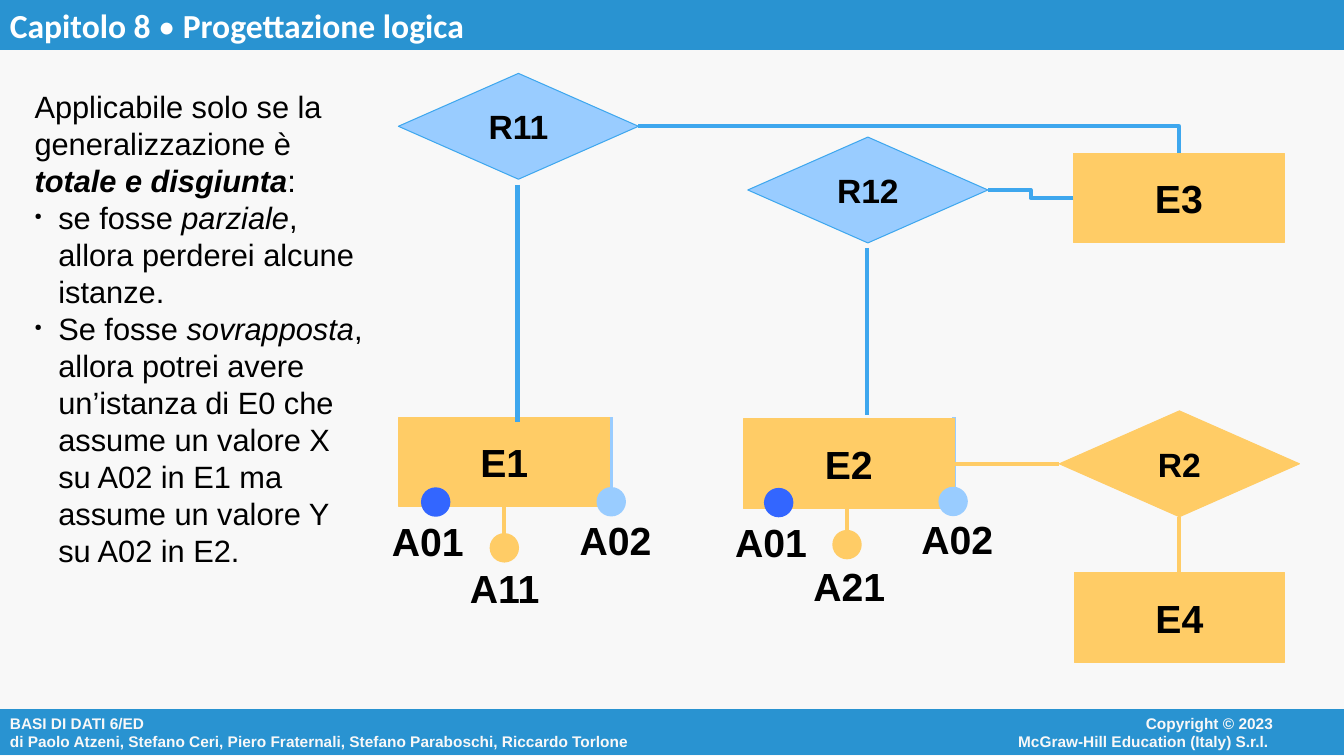
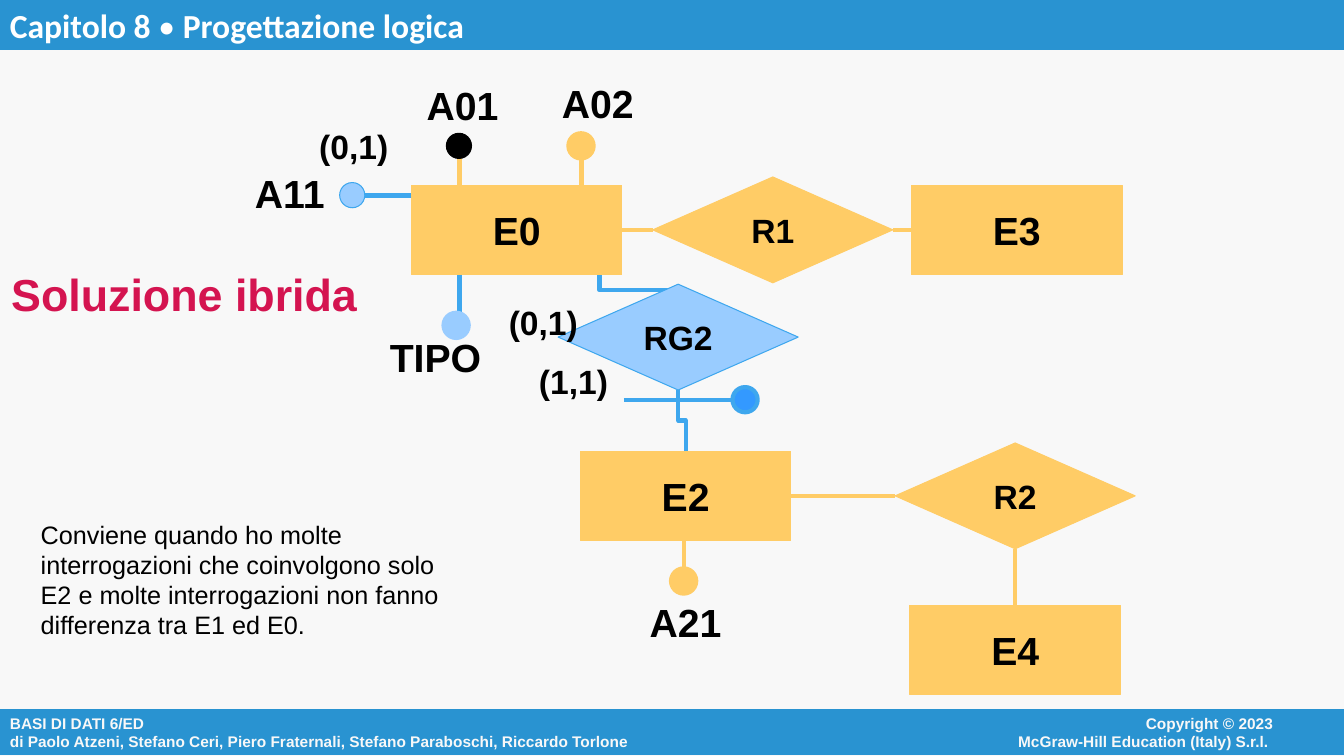
import dataclasses

import lxml.etree
import pptx
import pptx.dml.color
import pptx.enum.shapes
import pptx.enum.text
import pptx.oxml.ns
import pptx.util

Pt = pptx.util.Pt
SHAPE = pptx.enum.shapes.MSO_SHAPE
LINE = pptx.enum.shapes.MSO_CONNECTOR
ALIGN = pptx.enum.text.PP_ALIGN
ANCHOR = pptx.enum.text.MSO_ANCHOR
qn = pptx.oxml.ns.qn
TOP, LEFT, BOTTOM, RIGHT = range(4)


@dataclasses.dataclass(frozen=True)
class Theme:
    paper: str = "F8F8F8"
    band: str = "2993D1"
    white: str = "FFFFFF"
    ink: str = "000000"
    orange: str = "FFCC66"
    pale: str = "99CCFF"
    blue: str = "3EA7EE"
    key: str = "3366FF"
    bright: str = "3399FF"
    red: str = "D41450"
    font: str = "Arial"
    title_font: str = "Calibri"
    footer: float = 11
    note: float = 18
    body: float = 22
    small: float = 24
    label: float = 28
    heading: float = 32
    thin: float = 0.75
    thick: float = 3


T = Theme()
WIDTH, HEIGHT = 960, 540
ENTITY = (150.5, 64)
RELATION = (171.5, 75.6)
DOT = 18


def rgb(value):
    return pptx.dml.color.RGBColor.from_string(value)


def add_bullet(p):
    pPr = p._p.get_or_add_pPr()
    pPr.set("marL", str(Pt(17)))
    pPr.set("indent", str(-Pt(17)))
    color = lxml.etree.SubElement(pPr, qn("a:buClr"))
    lxml.etree.SubElement(color, qn("a:srgbClr"), val=T.ink)
    lxml.etree.SubElement(pPr, qn("a:buSzPct"), val="30000")
    lxml.etree.SubElement(pPr, qn("a:buChar"), char="●")


def write(sp, *paragraphs, size=T.label, font=T.font, color=T.ink, bold=False,
          align=ALIGN.LEFT, anchor=ANCHOR.TOP, wrap=True, bullets=()):
    tf = sp.text_frame
    tf.word_wrap = wrap
    tf.vertical_anchor = anchor
    for i, runs in enumerate(paragraphs):
        p = tf.paragraphs[0] if i == 0 else tf.add_paragraph()
        p.alignment = align
        if i in bullets:
            add_bullet(p)
        for run in [(runs, "")] if isinstance(runs, str) else runs:
            text, style = run
            r = p.add_run()
            r.text = text
            r.font.size = Pt(size)
            r.font.name = font
            r.font.color.rgb = rgb(color)
            r.font.bold = bold or "b" in style
            r.font.italic = "i" in style


def add_text(s, x, y, w, h, *paragraphs, **fmt):
    sp = s.shapes.add_textbox(Pt(x), Pt(y), Pt(w), Pt(h))
    write(sp, *paragraphs, **fmt)


def add_shape(s, kind, x, y, w, h, fill, line, weight=T.thin):
    sp = s.shapes.add_shape(kind, Pt(x), Pt(y), Pt(w), Pt(h))
    sp.shadow.inherit = False
    sp.fill.solid()
    sp.fill.fore_color.rgb = rgb(fill)
    sp.line.color.rgb = rgb(line)
    sp.line.width = Pt(weight)
    return sp


def add_entity(s, name, x, y):
    sp = add_shape(s, SHAPE.RECTANGLE, x, y, *ENTITY, T.orange, T.orange)
    write(sp, name, bold=True, align=ALIGN.CENTER, anchor=ANCHOR.MIDDLE, wrap=False)
    return sp


def add_relation(s, name, x, y, fill=T.orange, line=T.orange):
    sp = add_shape(s, SHAPE.DIAMOND, x, y, *RELATION, fill, line)
    write(sp, name, size=T.small, bold=True, align=ALIGN.CENTER,
          anchor=ANCHOR.MIDDLE, wrap=False)
    return sp


def add_dot(s, x, y, fill, line=None, weight=T.thick):
    return add_shape(s, SHAPE.OVAL, x, y, DOT, DOT, fill, line or fill, weight)


def add_label(s, name, x, y, w=80):
    add_text(s, x, y, w, 40, name, bold=True)


def add_cardinality(s, text, x, y):
    add_text(s, x, y, 80, 36, text, size=T.small, bold=True,
             align=ALIGN.CENTER, anchor=ANCHOR.MIDDLE)


def add_line(s, x1, y1, x2, y2, color=T.blue, kind=LINE.STRAIGHT):
    c = s.shapes.add_connector(kind, Pt(x1), Pt(y1), Pt(x2), Pt(y2))
    c.line.color.rgb = rgb(color)
    c.line.width = Pt(T.thick)
    lxml.etree.SubElement(c._element.spPr, qn("a:effectLst"))
    return c


def add_elbow(s, x1, y1, x2, y2):
    return add_line(s, x1, y1, x2, y2, kind=LINE.ELBOW)


def add_corner(s, x1, y1, x2, y2):
    c = add_elbow(s, x1, y1, x2, y2)
    c._element.spPr.find(qn("a:prstGeom")).set("prst", "bentConnector2")


def add_upright_elbow(s, x1, y1, x2, y2):
    cx, cy = (x1 + x2) / 2, (y1 + y2) / 2
    dx, dy = (x2 - x1) / 2, (y2 - y1) / 2
    c = add_elbow(s, cx - dy, cy + dx, cx + dy, cy - dx)
    c._element.spPr.find(qn("a:xfrm")).set("rot", str(90 * 60000))


def join(s, first, first_side, second, second_side):
    c = add_line(s, 0, 0, 0, 0, T.orange)
    c.begin_connect(first, first_side)
    c.end_connect(second, second_side)


def add_slide(prs):
    s = prs.slides.add_slide(prs.slide_layouts[6])
    s.background.fill.solid()
    s.background.fill.fore_color.rgb = rgb(T.paper)
    footer = add_shape(s, SHAPE.RECTANGLE, 0, 506.2, WIDTH + 1, 33.8, T.band, T.paper)
    write(footer, "BASI DI DATI 6/ED",
          "di Paolo Atzeni, Stefano Ceri, Piero Fraternali, Stefano Paraboschi, Riccardo Torlone",
          size=T.footer, color=T.paper, bold=True, anchor=ANCHOR.MIDDLE)
    add_text(s, 640, 506.2, 276.5, 33, "Copyright © 2023",
             "McGraw-Hill Education (Italy) S.r.l. ",
             size=T.footer, color=T.paper, bold=True, align=ALIGN.RIGHT)
    title = add_shape(s, SHAPE.RECTANGLE, 0, 0, WIDTH + 1, 36, T.band, T.paper, 0)
    write(title, [("Capitolo 8 ", "b"), ("•", ""), (" Progettazione logica", "b")],
          size=T.small, font=T.title_font, color=T.white)
    return s


def build_split_entities(prs):
    s = add_slide(prs)
    for x in (436.3, 681.2):
        add_line(s, x, 298, x, 351, T.pale)

    e1 = add_entity(s, "E1", 285, 298.1)
    e2 = add_entity(s, "E2", 531, 299.3)
    add_entity(s, "E3", 766.8, 109.4)
    e4 = add_entity(s, "E4", 767.2, 409)
    r2 = add_relation(s, "R2", 756.7, 293.5)
    add_relation(s, "R11", 284.6, 52.4, T.pale, T.blue)
    add_relation(s, "R12", 534.2, 97.9, T.pale, T.blue)

    join(s, e2, RIGHT, r2, LEFT)
    join(s, r2, BOTTOM, e4, TOP)
    add_corner(s, 456, 90.2, 842, 109.4)
    add_elbow(s, 766.8, 141.5, 705.6, 135.8)
    add_line(s, 369.7, 132, 369.7, 301.5)
    add_line(s, 619.5, 177, 619.5, 296.5)

    a11 = add_dot(s, 351.25, 382.3, T.orange)
    join(s, e1, BOTTOM, a11, TOP)
    add_line(s, 605, 362, 605, 383, T.orange)
    add_dot(s, 596, 380, T.orange)
    for x, y, color in ((302.2, 349.6, T.key), (427.6, 349.4, T.pale),
                        (547.2, 350, T.key), (671.8, 349.2, T.pale)):
        add_dot(s, x, y, color)
    for name, x, y in (("A01", 272.9, 366), ("A02", 407, 365.2), ("A11", 328.5, 399.6),
                       ("A01", 518, 366.6), ("A02", 651, 364.4), ("A21", 574, 398.2)):
        add_label(s, name, x, y)

    add_text(
        s, 17.6, 59.4, 253.5, 432,
        [("Applicabile solo se la generalizzazione è ", ""),
         ("totale e disgiunta", "bi"), (":", "")],
        [("se fosse ", ""), ("parziale", "i"),
         (", allora perderei alcune istanze.", "")],
        [("Se fosse ", ""), ("sovrapposta", "i"),
         (", allora potrei avere un’istanza di E0 che assume un valore X "
          "su A02 in E1 ma assume un valore Y su A02 in E2.", "")],
        size=T.body, bullets=(1, 2))


def build_hybrid_solution(prs):
    s = add_slide(prs)
    add_elbow(s, 483, 207.4, 373.7, 195)
    e0 = add_entity(s, "E0", 293.8, 132.2)
    e2 = add_entity(s, "E2", 414.5, 322.2)
    e3 = add_entity(s, "E3", 651, 132.2)
    e4 = add_entity(s, "E4", 649.9, 432.2)
    r1 = add_relation(s, "R1", 466.3, 126.4)
    r2 = add_relation(s, "R2", 639.4, 316.4)
    add_relation(s, "RG2", 398.7, 203, T.pale, T.blue)

    join(s, e0, RIGHT, r1, LEFT)
    join(s, r1, RIGHT, e3, LEFT)
    join(s, e2, RIGHT, r2, LEFT)
    join(s, r2, BOTTOM, e4, TOP)
    add_upright_elbow(s, 484.5, 278.6, 489.75, 322.2)

    for x in (328.2, 415.4):
        add_line(s, x, 113, x, 132.2, T.orange)
    add_line(s, 488.5, 386.2, 488.5, 409.5, T.orange)
    add_line(s, 293.8, 139.7, 260, 139.7)
    add_line(s, 328.2, 196.2, 328.2, 226)
    add_line(s, 445.7, 285.8, 530, 285.8)
    add_dot(s, 318.8, 95.2, T.ink, weight=T.thin)
    add_dot(s, 406, 95.2, T.orange)
    add_dot(s, 242.6, 130.4, T.pale, T.blue, T.thin)
    add_dot(s, 316.8, 223.4, T.pale)
    add_dot(s, 523.2, 276.5, T.bright, T.blue)
    add_dot(s, 479.3, 406, T.orange)

    for name, x, y in (("A01", 297.6, 54.2), ("A02", 394.2, 53),
                       ("A11", 175, 117.4), ("A21", 457, 424)):
        add_label(s, name, x, y)
    add_label(s, "TIPO", 271.4, 234.7, 95)
    for text, x, y in (("(0,1)", 212.7, 86.6), ("(0,1)", 348.1, 212.2), ("(1,1)", 369.7, 254.4)):
        add_cardinality(s, text, x, y)

    add_text(s, 0, 196, 263.5, 28, "Soluzione ibrida", size=T.heading, color=T.red,
             bold=True, align=ALIGN.CENTER, anchor=ANCHOR.MIDDLE, wrap=False)
    add_text(s, 22, 367.2, 315, 104.4,
             "Conviene quando ho molte interrogazioni che coinvolgono solo E2 "
             "e molte interrogazioni non fanno differenza tra E1 ed E0.", size=T.note)


def main():
    prs = pptx.Presentation()
    prs.slide_width, prs.slide_height = Pt(WIDTH), Pt(HEIGHT)
    build_split_entities(prs)
    build_hybrid_solution(prs)
    prs.save("out.pptx")


if __name__ == "__main__":
    main()
